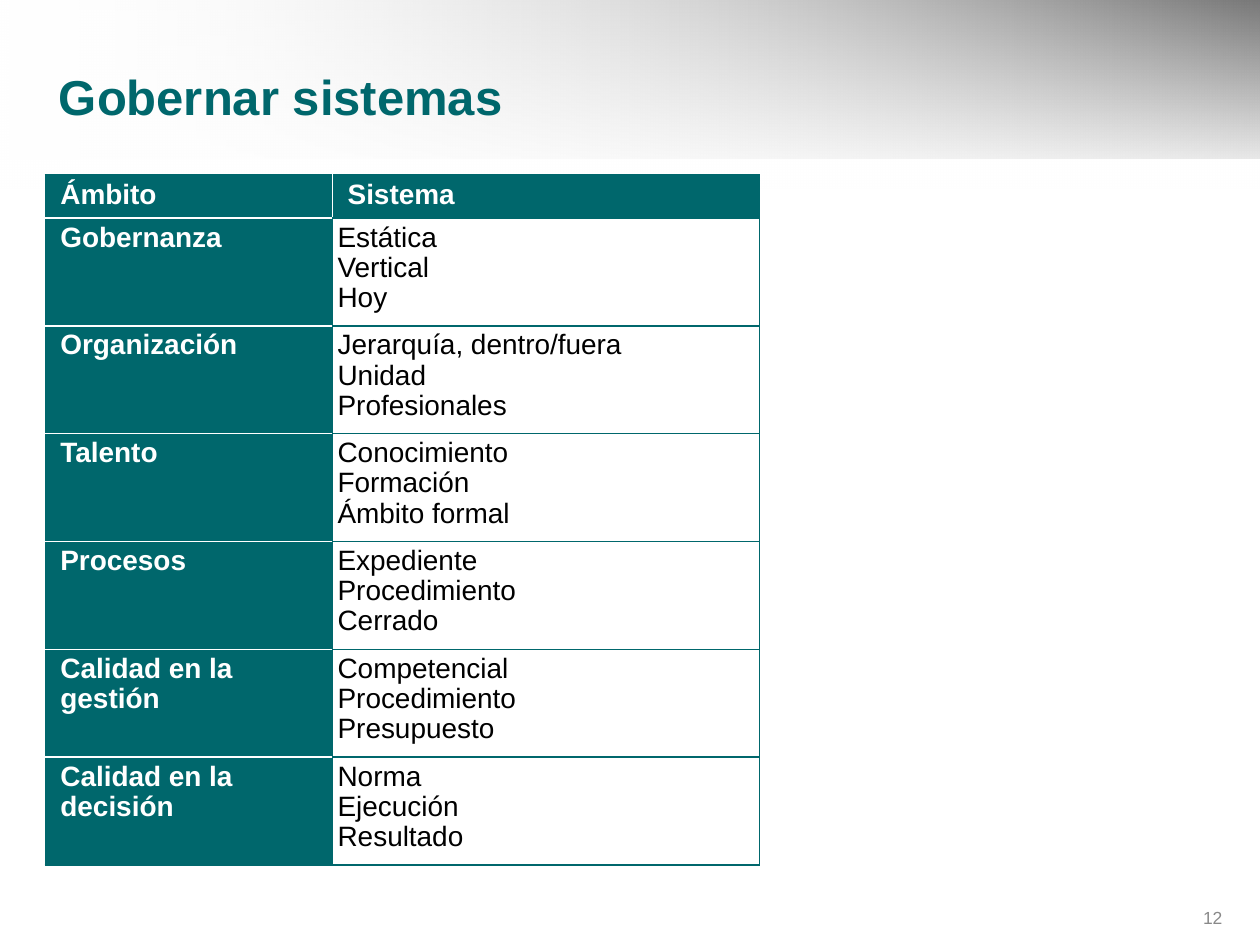
from typing import NamedTuple

from lxml import etree
from pptx import Presentation
from pptx.dml.color import RGBColor
from pptx.enum.shapes import MSO_SHAPE
from pptx.enum.text import MSO_ANCHOR, PP_ALIGN
from pptx.oxml.ns import qn
from pptx.util import Inches, Pt

RECT = MSO_SHAPE.RECTANGLE
MIDDLE = MSO_ANCHOR.MIDDLE
LEFT, RIGHT = PP_ALIGN.LEFT, PP_ALIGN.RIGHT
TEAL, WHITE, BLACK, GRAY = "00676C", "FFFFFF", "000000", "898989"
FONT = "Arial"
HEADER_HEIGHT, ROW_HEIGHT = 0.34, 0.82
COLUMN_WIDTHS = (2.28, 3.39)


class Row(NamedTuple):
    scope: str
    system: str


class Band(NamedTuple):
    height: float
    start: str
    end: str
    start_alpha: int
    angle: int


class Label(NamedTuple):
    text: str
    box: tuple[float, float, float, float]
    size: int
    color: str
    bold: bool
    align: PP_ALIGN


class Borders(NamedTuple):
    left: str
    right: str
    top: str
    bottom: str


HEADER = Row("Ámbito", "Sistema")
ROWS = [
    Row("Gobernanza", "Estática\nVertical\nHoy"),
    Row("Organización", "Jerarquía, dentro/fuera\nUnidad\nProfesionales"),
    Row("Talento", "Conocimiento\nFormación\nÁmbito formal"),
    Row("Procesos", "Expediente\nProcedimiento\nCerrado"),
    Row("Calidad en la gestión", "Competencial\nProcedimiento\nPresupuesto"),
    Row("Calidad en la decisión", "Norma\nEjecución\nResultado"),
]
BANDS = [
    Band(1.26, WHITE, BLACK, 0, 0),
    Band(1.5, WHITE, WHITE, 47, 270),
]
LABELS = [
    Label("12", (9.17, 7.14, 0.63, 0.29), 10, GRAY, False, RIGHT),
    Label("Gobernar sistemas", (0.37, 0.45, 9.43, 0.63), 28, TEAL, True, LEFT),
]


def rgb(color: str) -> RGBColor:
    return RGBColor.from_string(color)


def format_text(tf, size: int, color: str, bold: bool, align=LEFT, spacing=1.0) -> None:
    for p in tf.paragraphs:
        p.alignment = align
        p.line_spacing = spacing
        for r in p.runs:
            r.font.name = FONT
            r.font.size = Pt(size)
            r.font.bold = bold
            r.font.color.rgb = rgb(color)


def add_band(s, band: Band) -> None:
    sp = s.shapes.add_shape(RECT, 0, 0, Inches(10), Inches(band.height))
    sp.shadow.inherit = False
    sp.line.fill.background()
    sp.fill.gradient()
    sp.fill.gradient_angle = band.angle
    for stop, color, position in zip(
        sp.fill.gradient_stops, (band.start, band.end), (0, 1)
    ):
        stop.color.rgb = rgb(color)
        stop.position = position
    start = next(sp._element.spPr.iter(qn("a:srgbClr")))
    etree.SubElement(start, qn("a:alpha"), val=str(band.start_alpha * 1000))


def add_label(s, label: Label) -> None:
    tf = s.shapes.add_textbox(*map(Inches, label.box)).text_frame
    tf.word_wrap = True
    tf.vertical_anchor = MIDDLE
    tf.text = label.text
    format_text(tf, label.size, label.color, label.bold, label.align)


def set_borders(cell, borders: Borders) -> None:
    tc_pr = cell._tc.get_or_add_tcPr()
    for i, (side, color) in enumerate(zip("LRTB", borders)):
        ln = etree.Element(qn(f"a:ln{side}"), w=str(Pt(1)))
        fill = etree.SubElement(ln, qn("a:solidFill"))
        etree.SubElement(fill, qn("a:srgbClr"), val=color)
        tc_pr.insert(i, ln)


def fill_cell(cell, text: str, heading: bool, borders: Borders) -> None:
    cell.margin_left = Inches(0.12 if heading else 0.04)
    cell.margin_right = Inches(0.08 if heading else 0.04)
    cell.margin_top = cell.margin_bottom = Inches(0.04)
    cell.fill.solid()
    cell.fill.fore_color.rgb = rgb(TEAL if heading else WHITE)
    cell.text_frame.text = text
    format_text(cell.text_frame, 16, WHITE if heading else BLACK, heading, spacing=0.97)
    set_borders(cell, borders)


def add_systems_table(s) -> None:
    rows = [HEADER, *ROWS]
    height = HEADER_HEIGHT + ROW_HEIGHT * len(ROWS)
    table = s.shapes.add_table(
        len(rows), 2, Inches(0.36), Inches(1.39),
        Inches(sum(COLUMN_WIDTHS)), Inches(height),
    ).table
    table.first_row = table.horz_banding = False
    for column, width in zip(table.columns, COLUMN_WIDTHS):
        column.width = Inches(width)
    for i, row in enumerate(rows):
        is_header = i == 0
        table.rows[i].height = Inches(HEADER_HEIGHT if is_header else ROW_HEIGHT)
        divider = WHITE if is_header else TEAL
        top = TEAL if is_header else WHITE
        bottom = TEAL if i == len(ROWS) else WHITE
        fill_cell(table.cell(i, 0), row.scope, True, Borders(TEAL, divider, top, bottom))
        fill_cell(table.cell(i, 1), row.system, is_header, Borders(divider, TEAL, TEAL, TEAL))


def main() -> None:
    prs = Presentation()
    prs.slide_width, prs.slide_height = Inches(10), Inches(7.5)
    s = prs.slides.add_slide(prs.slide_layouts[6])
    for band in BANDS:
        add_band(s, band)
    for label in LABELS:
        add_label(s, label)
    add_systems_table(s)
    prs.save("out.pptx")


if __name__ == "__main__":
    main()
